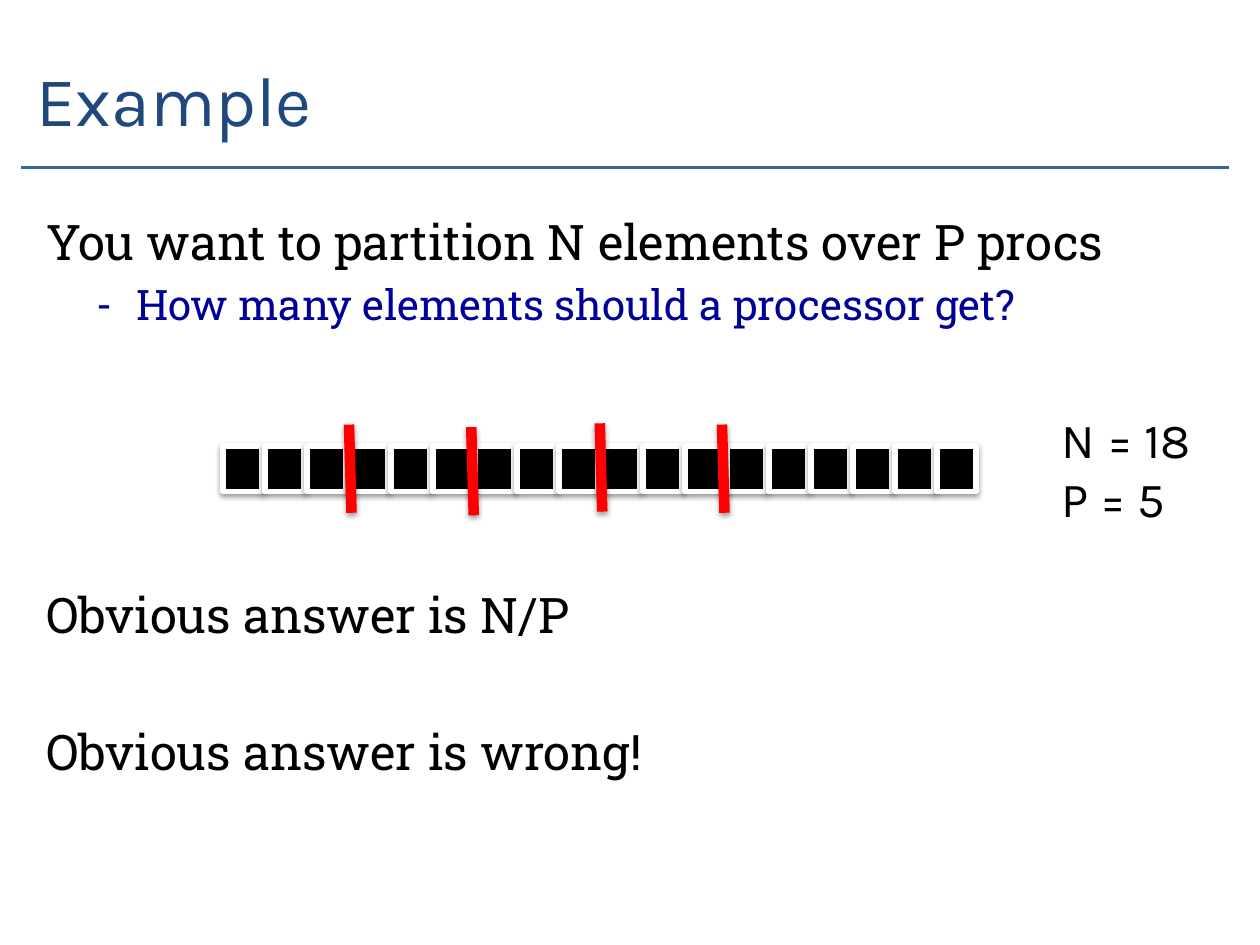
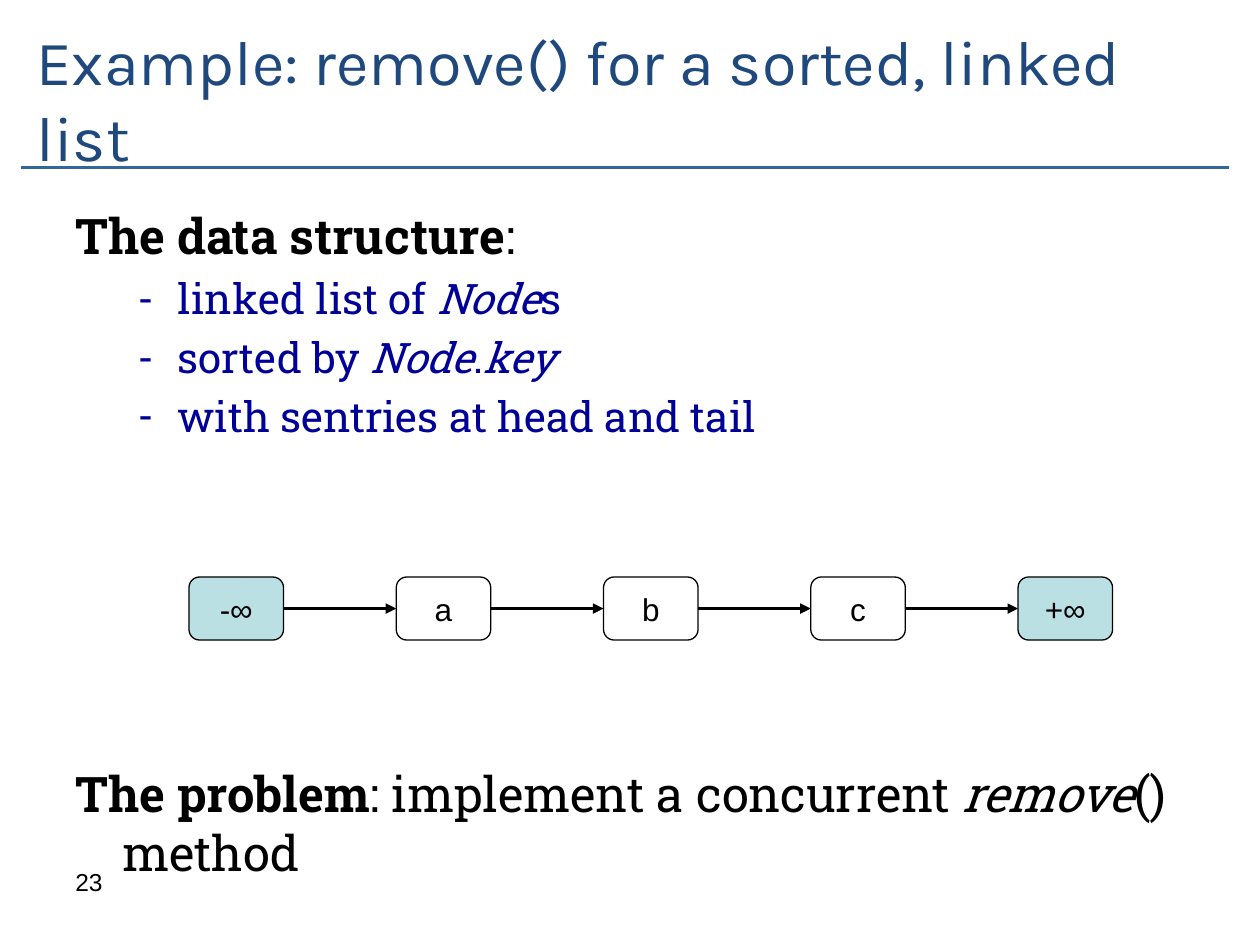
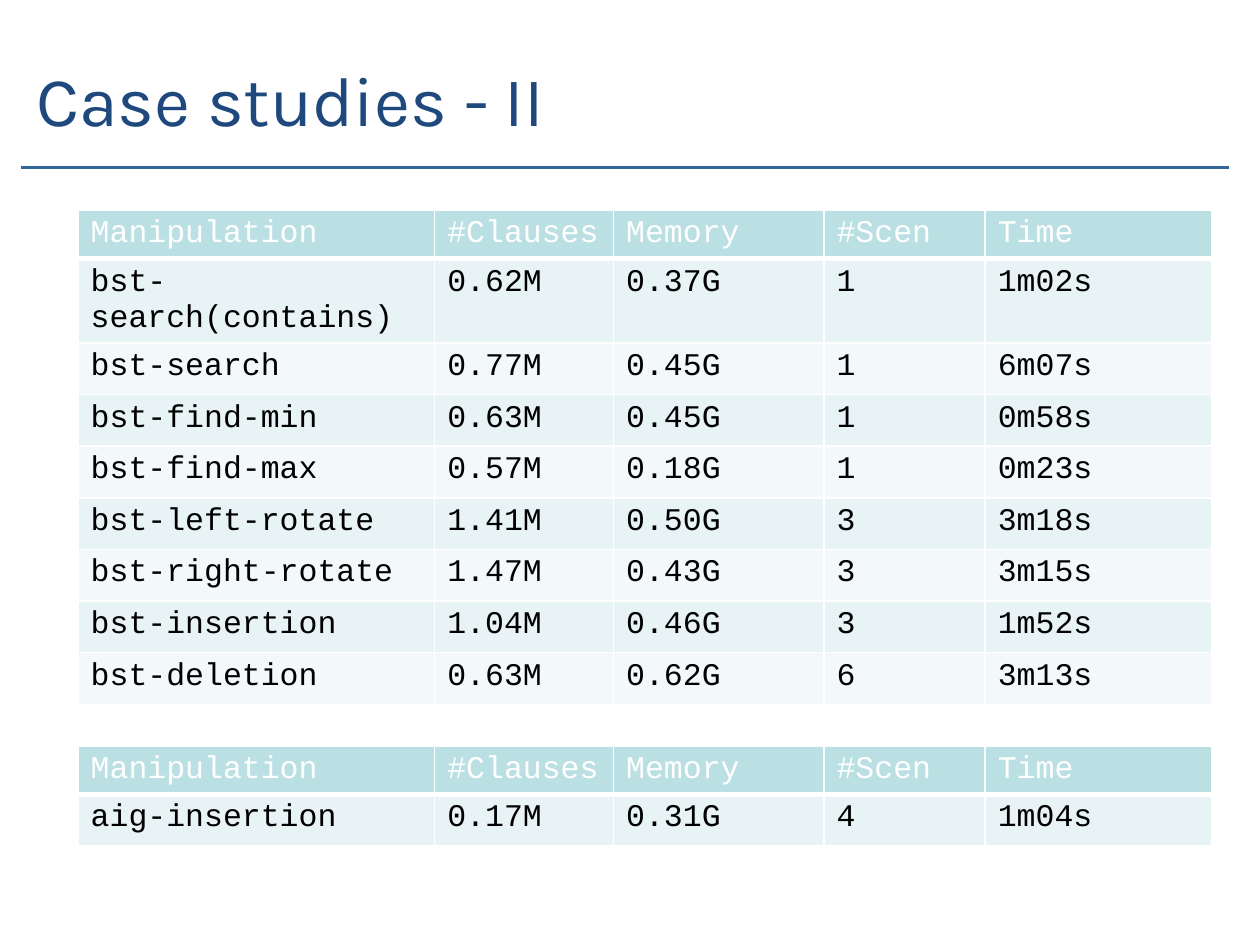
from copy import deepcopy
from lxml.etree import SubElement
from pptx import Presentation
from pptx.dml.color import RGBColor
from pptx.enum.shapes import MSO_CONNECTOR as Connector, MSO_SHAPE as Shape
from pptx.enum.text import MSO_ANCHOR as Anchor, MSO_AUTO_SIZE as AutoSize, PP_ALIGN as Align
from pptx.oxml import parse_xml
from pptx.oxml.ns import nsdecls, qn
from pptx.util import Inches, Pt

COLORS = {"title": "1F497D", "rule": "336699", "point": "000099", "black": "000000",
          "white": "FFFFFF", "cut": "FF0000", "teal": "BBE0E3",
          "odd": "E7F3F4", "even": "F3F9FA"}
COLOR = {name: RGBColor.from_string(value) for name, value in COLORS.items()}
TITLE_FONT, BODY_FONT, NODE_FONT, CODE_FONT = "Karla", "Roboto Slab", "Arial", "Courier New"
SHADOW = parse_xml(
    f'<a:effectLst {nsdecls("a")}><a:outerShdw blurRad="40000" dist="20000" dir="5400000" '
    'rotWithShape="0"><a:srgbClr val="000000"><a:alpha val="38000"/></a:srgbClr>'
    '</a:outerShdw></a:effectLst>')


def add_text(para, text, size=18, font=BODY_FONT, color="black", bold=False, italic=False):
    span = para.add_run()
    span.text = text
    span.font.size, span.font.name = Pt(size), font
    span.font.bold, span.font.italic = bold, italic
    span.font.color.rgb = COLOR[color]


def add_line(page, start, end, color, width, shadow=False):
    line = page.shapes.add_connector(Connector.STRAIGHT, *map(Inches, start + end))
    line.line.color.rgb = COLOR[color]
    line.line.width = Pt(width)
    properties = line._element.spPr
    if shadow:
        properties.append(deepcopy(SHADOW))
    else:
        SubElement(properties, qn("a:effectLst"))
    return line


deck = Presentation()
deck.slide_width, deck.slide_height = Inches(10), Inches(7.5)
master = deck.slide_master
CONTENT, TITLE_ONLY = deck.slide_layouts[1], deck.slide_layouts[5]

# Pages and their titles: layout, text, size, title width
titles = [(CONTENT, "Example", 40, 9),
          (CONTENT, "Example: remove() for a sorted, linked list", 36, 9.65),
          (TITLE_ONLY, "Case studies - II", 40, 9)]
pages = []
for layout, text, size, width in titles:
    page = deck.slides.add_slide(layout)
    title = page.shapes.title
    title.left, title.top = Inches(0.19), Inches(0.18)
    title.width, title.height = Inches(width), Inches(1.2)
    title.text_frame.auto_size = AutoSize.NONE
    title.text_frame.vertical_anchor = Anchor.MIDDLE
    para = title.text_frame.paragraphs[0]
    para.alignment = Align.LEFT
    add_text(para, text, size=size, font=TITLE_FONT, color="title")
    pages.append(page)
partition_page, list_page, results_page = pages

# Rule under the title, shared through the master
rule = add_line(partition_page, (0.17, 1.33), (9.75, 1.33), "rule", 2)
master.shapes._spTree.append(rule._element)

# Body lists: page, place, (margin, indent) of the top level, paragraphs
# Each paragraph is level, space before, spans
bodies = [
    (partition_page, (0.17, 1.63, 9.83, 4.95), (0.1, 0), [
        (0, 5.6, [("You want to partition N elements over P procs", {})]),
        (1, 4.8, [("How many elements should a processor get?", {})]),
        (0, 145.6, [("Obvious answer is N/P", {})]),
        (0, 44.8, [("Obvious answer is wrong!", {})])]),
    (list_page, (0.5, 1.58, 9.08, 5.75), (0.37, -0.37), [
        (0, 5.6, [("The data structure", {"bold": True}), (":", {})]),
        (1, 4.8, [("linked list of ", {}), ("Node", {"italic": True}), ("s", {})]),
        (1, 4.8, [("sorted by ", {}), ("Node", {"italic": True}), (".", {}),
                  ("key", {"italic": True})]),
        (1, 4.8, [("with sentries at head and tail", {})]),
        (0, 184.8, [("The problem", {"bold": True}), (": implement a concurrent ", {}),
                    ("remove", {"italic": True}), ("() method", {})])]),
]
for page, place, top_indent, paragraphs in bodies:
    body = page.placeholders[1]
    body.left, body.top, body.width, body.height = map(Inches, place)
    frame = body.text_frame
    frame.auto_size = AutoSize.NONE
    for number, (level, space, spans) in enumerate(paragraphs):
        para = frame.add_paragraph() if number else frame.paragraphs[0]
        para.level = level
        para.space_before = Pt(space)
        margin, indent = (0.81, -0.31) if level else top_indent
        properties = para._p.get_or_add_pPr()
        properties.set("marL", str(Inches(margin)))
        properties.set("indent", str(Inches(indent)))
        if level:
            SubElement(properties, qn("a:buChar")).set("char", "-")
        else:
            SubElement(properties, qn("a:buNone"))
        for text, style in spans:
            add_text(para, text, size=24 if level else 28,
                     color="point" if level else "black", **style)

# Row of 18 elements
for number in range(18):
    element = partition_page.shapes.add_shape(
        Shape.RECTANGLE, Inches(1.77 + number / 3), Inches(3.54), Inches(0.31), Inches(0.36))
    element.fill.solid()
    element.fill.fore_color.rgb = COLOR["black"]
    element.line.color.rgb = COLOR["white"]
    element.line.width = Pt(3)
    element._element.spPr.append(deepcopy(SHADOW))

# Cuts between processors
for left, top in [(2.77, 3.37), (3.74, 3.39), (4.76, 3.36), (5.73, 3.37)]:
    add_line(partition_page, (left, top), (left + 0.02, top + 0.7), "cut", 6, shadow=True)

# Values of N and P
box = partition_page.shapes.add_textbox(Inches(8.33), Inches(3.2), Inches(1.42), Inches(1.04))
box.text_frame.word_wrap = False
add_text(box.text_frame.paragraphs[0], "N = 18", size=28, font=TITLE_FONT)
add_text(box.text_frame.add_paragraph(), "P = 5", size=28, font=TITLE_FONT)

# Page number
box = list_page.shapes.add_textbox(Inches(0.5), Inches(6.83), Inches(2.33), Inches(0.52))
box.text_frame.word_wrap = True
add_text(box.text_frame.paragraphs[0], "23", size=14, font=NODE_FONT)

# Linked list with a sentry at each end
nodes = []
for number, key in enumerate(["-∞", "a", "b", "c", "+∞"]):
    node = list_page.shapes.add_shape(
        Shape.ROUNDED_RECTANGLE, Inches(1.5 + number * 6.58 / 4), Inches(4.58),
        Inches(0.75), Inches(0.5))
    node.shadow.inherit = False
    if "∞" in key:
        node.fill.solid()
        node.fill.fore_color.rgb = COLOR["teal"]
    else:
        node.fill.background()
    node.line.color.rgb = COLOR["black"]
    node.line.width = Pt(0.75)
    node.text_frame.word_wrap = False
    node.text_frame.vertical_anchor = Anchor.MIDDLE
    para = node.text_frame.paragraphs[0]
    para.alignment = Align.CENTER
    add_text(para, key, font=NODE_FONT)
    nodes.append(node)
for node, successor in zip(nodes, nodes[1:]):
    arrow = add_line(list_page, (0, 0), (1, 1), "black", 2)
    arrow.begin_connect(node, 3)
    arrow.end_connect(successor, 1)
    SubElement(arrow.line._get_or_add_ln(), qn("a:tailEnd")).set("type", "triangle")

# Result tables
HEADER = ["Manipulation", "#Clauses", "Memory", "#Scen", "Time"]
COLUMNS = [2.83, 1.42, 1.67, 1.28, 1.8]
HEADER_HEIGHT, ROW_HEIGHT = 0.38, 0.41
tree_results = [
    ["bst-search(contains)", "0.62M", "0.37G", "1", "1m02s"],
    ["bst-search", "0.77M", "0.45G", "1", "6m07s"],
    ["bst-find-min", "0.63M", "0.45G", "1", "0m58s"],
    ["bst-find-max", "0.57M", "0.18G", "1", "0m23s"],
    ["bst-left-rotate", "1.41M", "0.50G", "3", "3m18s"],
    ["bst-right-rotate", "1.47M", "0.43G", "3", "3m15s"],
    ["bst-insertion", "1.04M", "0.46G", "3", "1m52s"],
    ["bst-deletion", "0.63M", "0.62G", "6", "3m13s"],
]
graph_results = [["aig-insertion", "0.17M", "0.31G", "4", "1m04s"]]
for top, results in [(1.67, tree_results), (5.92, graph_results)]:
    rows = [HEADER] + results
    height = HEADER_HEIGHT + ROW_HEIGHT * len(results)
    table = results_page.shapes.add_table(
        len(rows), len(COLUMNS), Inches(0.62), Inches(top),
        Inches(sum(COLUMNS)), Inches(height)).table
    for column, width in zip(table.columns, COLUMNS):
        column.width = Inches(width)
    for row, values in enumerate(rows):
        table.rows[row].height = Inches(ROW_HEIGHT if row else HEADER_HEIGHT)
        fill = ("odd" if row % 2 else "even") if row else "teal"
        for column, value in enumerate(values):
            cell = table.cell(row, column)
            add_text(cell.text_frame.paragraphs[0], value, font=CODE_FONT,
                     color="black" if row else "white")
            # White borders, thick between header and body
            thick_side = "T" if row == 1 else "B" if row == 0 else None
            for side in "LRTB":
                border = SubElement(cell._tc.get_or_add_tcPr(), qn(f"a:ln{side}"))
                border.set("w", str(Pt(3 if side == thick_side else 1)))
                paint = SubElement(border, qn("a:solidFill"))
                SubElement(paint, qn("a:srgbClr")).set("val", COLORS["white"])
            cell.fill.solid()
            cell.fill.fore_color.rgb = COLOR[fill]

deck.save("out.pptx")
